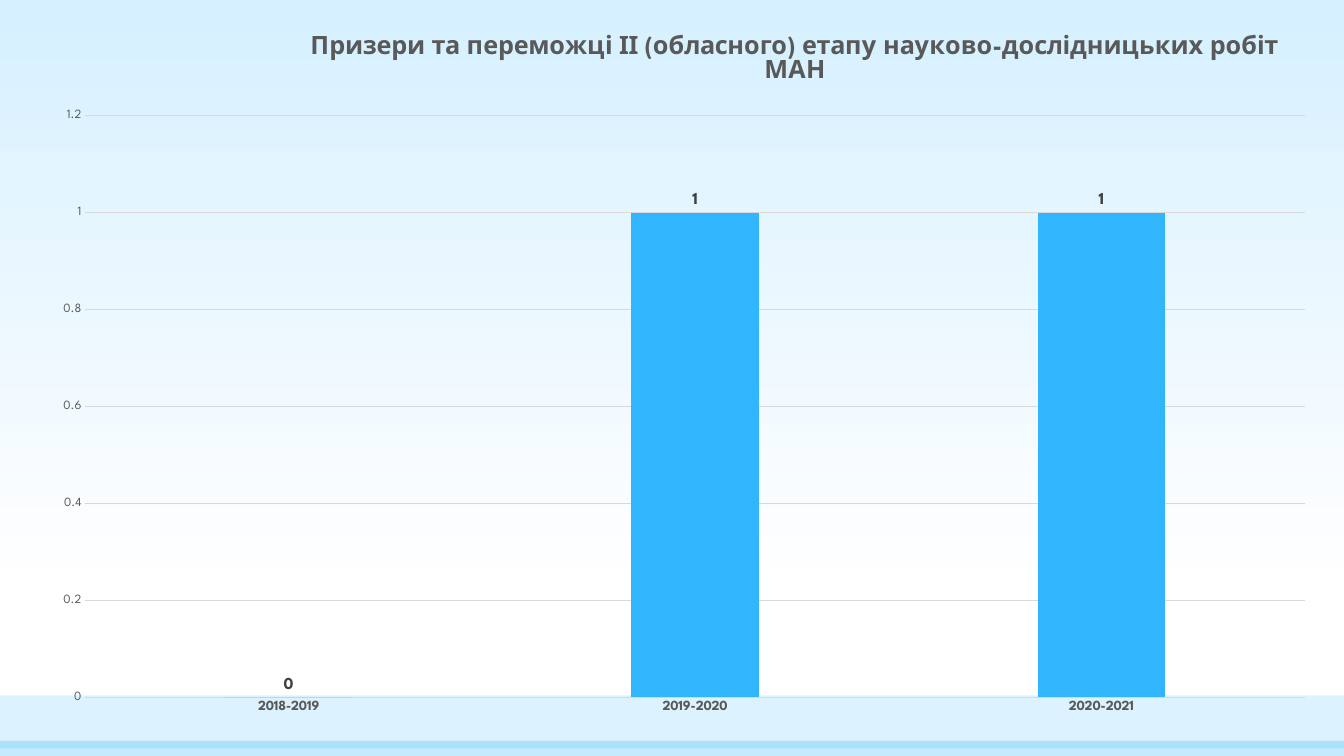
from lxml import etree
from pptx import Presentation
from pptx import util as u
from pptx.chart.data import CategoryChartData
from pptx.dml.color import RGBColor
from pptx.enum import chart as ch, shapes
from pptx.oxml.ns import qn

HUES = {"sky": "D6F0FF", "white": "FFFFFF", "blue": "31B6FD",
        "grid": "D9D9D9", "grey": "595959", "dark": "404040"}
FACE = "League Spartan"
TITLE = ("Призери та переможці ІІ (обласного) етапу "
         "науково-дослідницьких робіт МАН")


def rgb(hue):
    return RGBColor.from_string(HUES[hue])


class Deck:
    def __init__(self, wide, high):
        self.prs = Presentation()
        self.prs.slide_width = u.Inches(wide)
        self.prs.slide_height = u.Inches(high)
        self.slide = self.prs.slides.add_slide(self.prs.slide_layouts[6])

    def box(self, x, y, w, h):
        """Turn shares of the slide into lengths."""
        wide, high = self.prs.slide_width, self.prs.slide_height
        return int(x * wide), int(y * high), int(w * wide), int(h * high)

    def back(self, *stops):
        """Fill the background from top to bottom."""
        fill = self.slide.background.fill
        fill.gradient()
        fill.gradient_angle = 270
        for stop, (hue, pos) in zip(fill.gradient_stops, stops):
            stop.color.rgb = rgb(hue)
            stop.position = pos

    def band(self, top, high, hue, alpha):
        """Draw a see-through strip over the full width."""
        bar = self.slide.shapes.add_shape(
            shapes.MSO_SHAPE.RECTANGLE, *self.box(0, top, 1, high))
        bar.shadow.inherit = False
        bar.line.fill.background()
        bar.fill.solid()
        bar.fill.fore_color.rgb = rgb(hue)
        tint = bar.fill._xPr.find(".//" + qn("a:srgbClr"))
        etree.SubElement(tint, qn("a:alpha"), val=str(alpha * 1000))

    def style(self, font, size, hue, bold=False):
        font.name = FACE
        font.size = u.Pt(size)
        font.bold = bold
        font.color.rgb = rgb(hue)

    def place(self, node, **spots):
        """Set a manual layout in shares of the chart."""
        lay = node.find(qn("c:layout"))
        if lay is None:
            lay = etree.Element(qn("c:layout"))
            node.insert(0, lay)
        hand = etree.SubElement(lay, qn("c:manualLayout"))
        if "w" in spots:
            etree.SubElement(hand, qn("c:layoutTarget"), val="inner")
        for key in ("x", "y"):
            etree.SubElement(hand, qn(f"c:{key}Mode"), val="edge")
        for key, val in spots.items():
            etree.SubElement(hand, qn(f"c:{key}"), val=str(val))

    def axis(self, axis, size, bold=False):
        axis.major_tick_mark = axis.minor_tick_mark = ch.XL_TICK_MARK.NONE
        self.style(axis.tick_labels.font, size, "grey", bold)

    def rule(self, line):
        line.color.rgb = rgb("grid")
        line.width = u.Pt(0.75)

    def chart(self, spot, title, years, vals):
        data = CategoryChartData()
        data.categories = years
        data.add_series("Series 1", vals)
        chart = self.slide.shapes.add_chart(
            ch.XL_CHART_TYPE.COLUMN_CLUSTERED, *self.box(*spot), data).chart
        chart.has_legend = False
        self.style(chart.font, 10, "grey")

        para = chart.chart_title.text_frame.paragraphs[0]
        para.text = title
        self.style(para.font, 18, "grey", True)
        chart.chart_title.include_in_layout = False
        self.place(chart.chart_title._element, x=0.21, y=0.02)
        self.place(chart._chartSpace.chart.plotArea,
                   x=0.04, y=0.14, w=0.94, h=0.81)

        self.axis(chart.category_axis, 10, True)
        self.rule(chart.category_axis.format.line)
        scale = chart.value_axis
        self.axis(scale, 9)
        scale.format.line.fill.background()
        self.rule(scale.major_gridlines.format.line)
        scale.minimum_scale, scale.maximum_scale = 0, 1.2
        scale.major_unit = 0.2

        plot = chart.plots[0]
        plot.gap_width, plot.overlap = 219, -27
        plot.vary_by_categories = False
        fill = plot.series[0].format.fill
        fill.solid()
        fill.fore_color.rgb = rgb("blue")
        tags = plot.series[0].data_labels
        tags.show_value = True
        tags.position = ch.XL_LABEL_POSITION.OUTSIDE_END
        self.style(tags.font, 12, "dark", True)


def main():
    deck = Deck(13.33, 7.5)
    deck.back(("sky", 0), ("white", 0.79))
    deck.band(0.92, 0.07, "blue", 17)
    deck.band(0.98, 0.02, "blue", 28)
    years = [f"{year}-{year + 1}" for year in range(2018, 2021)]
    deck.chart((0.025, 0.02, 0.965, 0.95), TITLE, years, (0, 1, 1))
    deck.prs.save("out.pptx")


if __name__ == "__main__":
    main()
